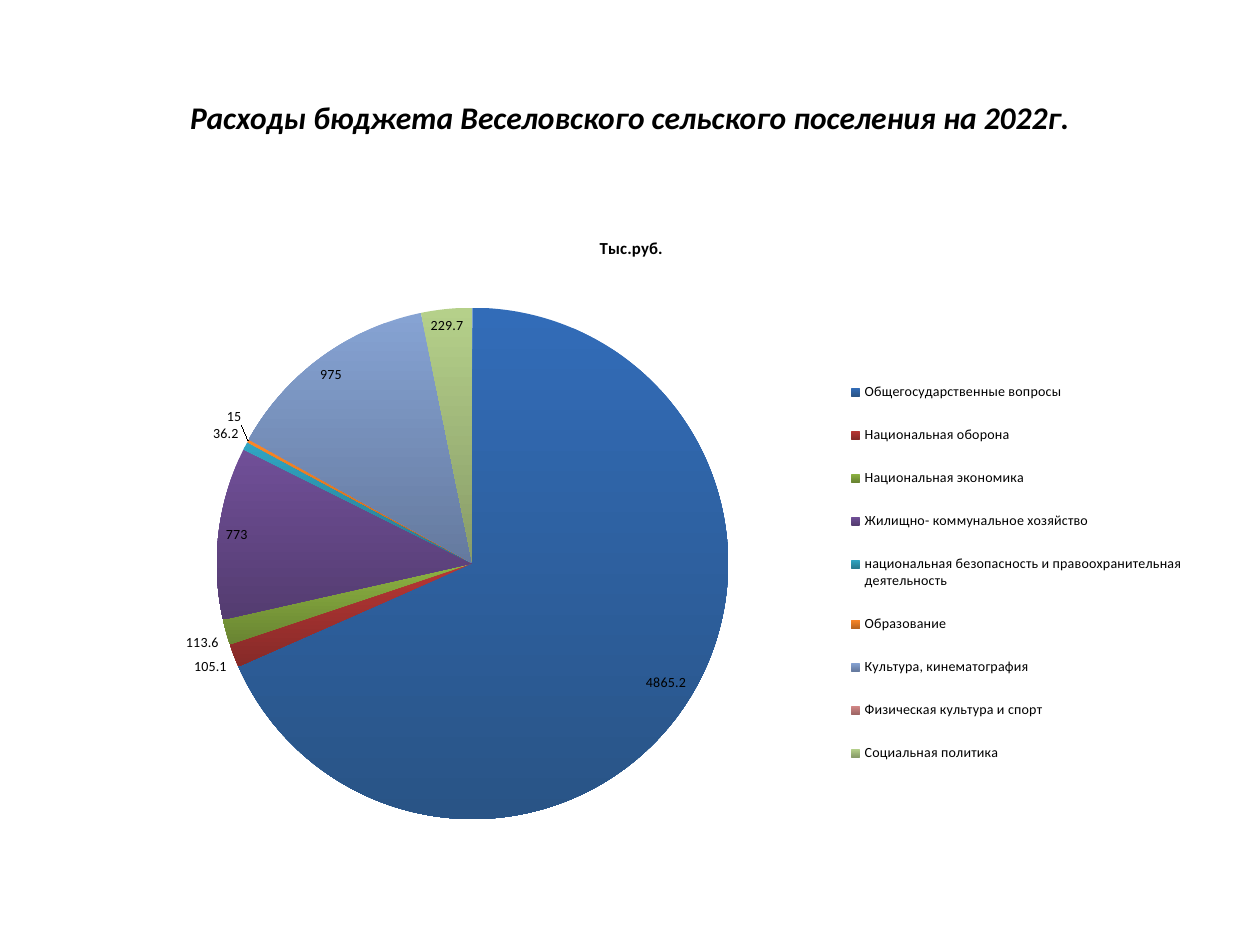
import dataclasses

import lxml.etree
import pptx
import pptx.chart.data
import pptx.dml.color
import pptx.enum.chart
import pptx.enum.text
import pptx.oxml
import pptx.oxml.ns
import pptx.util

Inches = pptx.util.Inches
Pt = pptx.util.Pt
RGBColor = pptx.dml.color.RGBColor

FONT = "Calibri"
BLACK = RGBColor(0, 0, 0)


@dataclasses.dataclass
class Slice:
    name: str
    value: float
    top: RGBColor
    base: RGBColor


@dataclasses.dataclass
class Box:
    """Place inside the chart, as fractions of its size."""
    x: float
    y: float
    w: float
    h: float


SLICES = [
    Slice("Общегосударственные вопросы", 4865.2,
          RGBColor(0x32, 0x6C, 0xB8), RGBColor(0x29, 0x54, 0x86)),
    Slice("Национальная оборона", 105.1,
          RGBColor(0xB8, 0x36, 0x34), RGBColor(0x86, 0x2A, 0x28)),
    Slice("Национальная экономика", 113.6,
          RGBColor(0x8D, 0xB3, 0x42), RGBColor(0x69, 0x84, 0x32)),
    Slice("Жилищно- коммунальное хозяйство", 773,
          RGBColor(0x70, 0x4F, 0x98), RGBColor(0x54, 0x3C, 0x70)),
    Slice("национальная безопасность и правоохранительная деятельность", 36.2,
          RGBColor(0x30, 0xA5, 0xC2), RGBColor(0x27, 0x7A, 0x8F)),
    Slice("Образование", 15,
          RGBColor(0xFB, 0x86, 0x27), RGBColor(0xB9, 0x65, 0x20)),
    Slice("Культура, кинематография", 975,
          RGBColor(0x86, 0xA3, 0xD3), RGBColor(0x65, 0x7A, 0x9F)),
    Slice("Физическая культура и спорт", 0,
          RGBColor(0xD3, 0x87, 0x86), RGBColor(0x9F, 0x66, 0x65)),
    Slice("Социальная политика", 229.7,
          RGBColor(0xB5, 0xD0, 0x8A), RGBColor(0x88, 0x9C, 0x68)),
]


def style(font, size: float, bold: bool = False, slant: bool = False) -> None:
    font.name, font.size = FONT, Pt(size)
    font.bold, font.italic = bold, slant
    font.color.rgb = BLACK


def layout(box: Box, inner: bool = False) -> lxml.etree.ElementBase:
    target = '<c:layoutTarget val="inner"/>' if inner else ""
    return pptx.oxml.parse_xml(
        f'<c:layout {pptx.oxml.ns.nsdecls("c")}><c:manualLayout>{target}'
        '<c:xMode val="edge"/><c:yMode val="edge"/>'
        f'<c:x val="{box.x}"/><c:y val="{box.y}"/>'
        f'<c:w val="{box.w}"/><c:h val="{box.h}"/>'
        '</c:manualLayout></c:layout>')


def add_title(slide, text: str) -> None:
    title = slide.shapes.title
    title.left, title.top = Inches(0.5), Inches(0.3)
    title.width, title.height = Inches(9), Inches(1.25)
    frame = title.text_frame
    frame.vertical_anchor = pptx.enum.text.MSO_ANCHOR.MIDDLE
    para = frame.paragraphs[0]
    para.alignment = pptx.enum.text.PP_ALIGN.CENTER
    run = para.add_run()
    run.text = text
    style(run.font, 18, bold=True, slant=True)


def add_pie(slide, slices: list[Slice]) -> None:
    data = pptx.chart.data.CategoryChartData()
    data.categories = [part.name for part in slices]
    data.add_series("Тыс.руб.", [part.value for part in slices])
    chart = slide.shapes.add_chart(
        pptx.enum.chart.XL_CHART_TYPE.PIE, Inches(0.51), Inches(1.7),
        Inches(9), Inches(4.95), data).chart
    style(chart.font, 8)

    # Chart title
    chart.has_title = True
    run = chart.chart_title.text_frame.paragraphs[0].add_run()
    run.text = "Тыс.руб."
    style(run.font, 9.6, bold=True)

    # Shaded slices
    plot = chart.plots[0]
    plot.vary_by_categories = True
    for i, part in enumerate(slices):
        fill = plot.series[0].points[i].format.fill
        fill.gradient()
        fill.gradient_angle = 270
        for stop, color in zip(fill.gradient_stops, (part.top, part.base)):
            stop.color.rgb = color

    # Value labels, with zero left blank
    plot.has_data_labels = True
    labels = plot.data_labels
    labels.show_value = True
    labels.show_percentage = False
    labels.number_format = "General;;;"
    labels.number_format_is_linked = False
    labels.position = pptx.enum.chart.XL_LABEL_POSITION.BEST_FIT
    style(labels.font, 8)

    # Legend
    chart.has_legend = True
    legend = chart.legend
    legend.position = pptx.enum.chart.XL_LEGEND_POSITION.RIGHT
    legend.include_in_layout = False
    style(legend.font, 8)

    # Places of legend and pie
    ns = {"c": pptx.oxml.ns.nsuri("c")}
    root = chart.element
    for old in root.xpath("c:chart/c:plotArea/c:layout | c:chart/c:legend/c:layout"):
        old.getparent().remove(old)
    root.find(".//c:legendPos", ns).addnext(layout(Box(0.69, 0.23, 0.3, 0.69)))
    area = root.find(".//c:plotArea", ns)
    area.insert(0, layout(Box(0.13, 0.15, 0.46, 0.82), inner=True))


def main() -> None:
    deck = pptx.Presentation()
    deck.slide_width, deck.slide_height = Inches(10), Inches(7.5)
    slide = deck.slides.add_slide(deck.slide_layouts[5])
    add_title(slide, "Расходы бюджета Веселовского сельского поселения на 2022г.")
    add_pie(slide, SLICES)
    deck.save("out.pptx")


if __name__ == "__main__":
    main()
